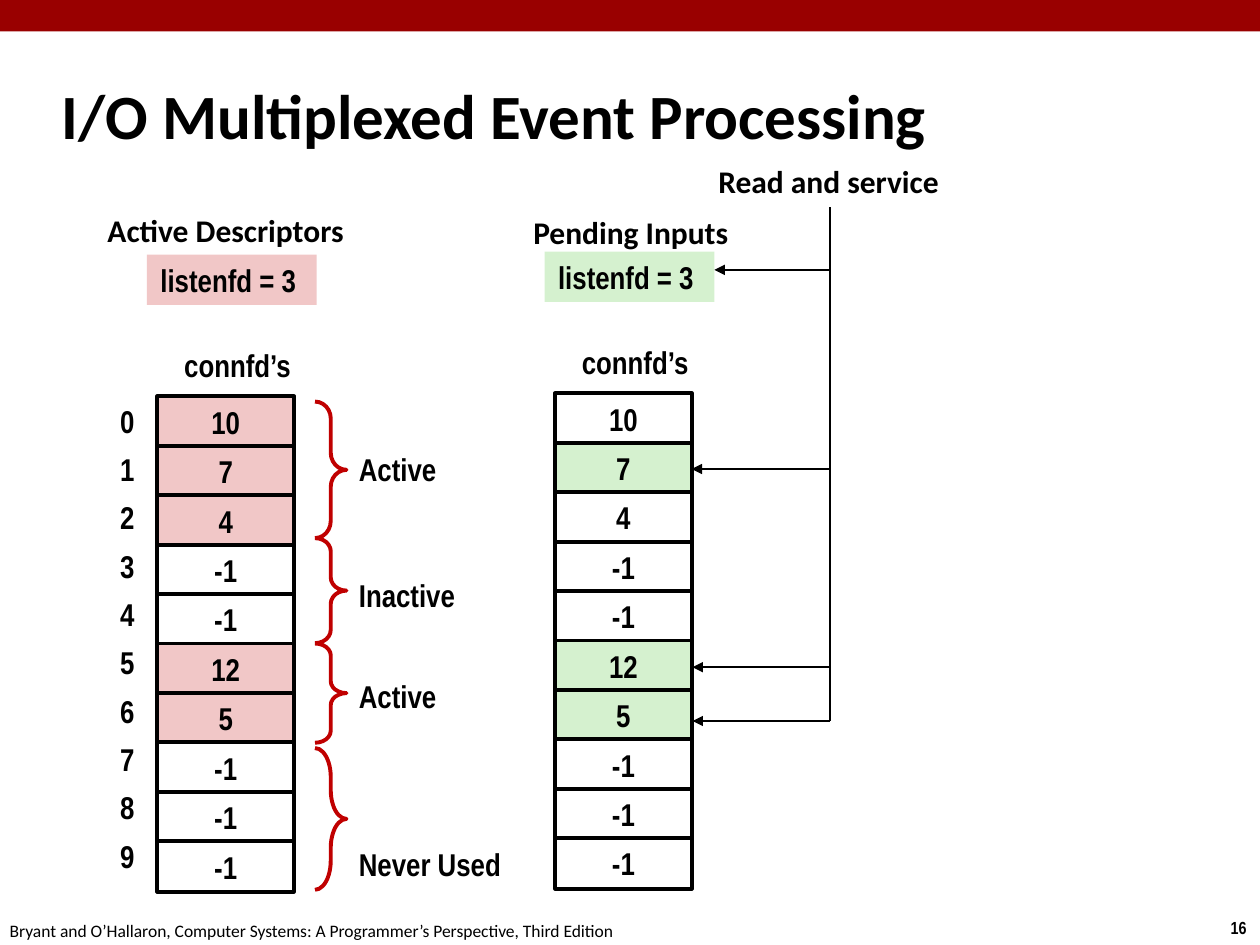
"""Build the slide on I/O multiplexed event processing."""
from dataclasses import dataclass

from lxml.etree import SubElement
from pptx import Presentation
from pptx.dml.color import RGBColor
from pptx.enum.shapes import MSO_CONNECTOR, MSO_SHAPE
from pptx.enum.text import MSO_ANCHOR, MSO_AUTO_SIZE, PP_ALIGN
from pptx.oxml.ns import qn
from pptx.util import Pt


@dataclass(frozen=True)
class Theme:
    ink: RGBColor = RGBColor(0, 0, 0)
    paper: RGBColor = RGBColor(255, 255, 255)
    banner: RGBColor = RGBColor(0x99, 0, 0)
    brace: RGBColor = RGBColor(0xC0, 0, 0)
    active: RGBColor = RGBColor(0xF1, 0xC7, 0xC7)
    pending: RGBColor = RGBColor(0xD5, 0xF1, 0xCF)
    heading: str = "Calibri"
    label: str = "Arial Narrow"
    title_size: int = 36
    text_size: int = 18
    footer_size: int = 10


theme = Theme()
prs = Presentation()
prs.slide_width, prs.slide_height = Pt(720), Pt(540)
s = prs.slides.add_slide(prs.slide_layouts[5])


def write(sp, text, font=theme.label, size=theme.text_size, bold=True,
          align=PP_ALIGN.CENTER, anchor=MSO_ANCHOR.TOP, wrap=False):
    tf = sp.text_frame
    tf.auto_size = MSO_AUTO_SIZE.NONE
    tf.word_wrap = wrap
    tf.vertical_anchor = anchor
    p = tf.paragraphs[0]
    p.alignment = align
    r = p.add_run()
    r.text = text
    r.font.name, r.font.size, r.font.bold = font, Pt(size), bold
    r.font.color.rgb = theme.ink
    return p


def add_box(kind, x, y, w, h, fill=None, line=None):
    sp = s.shapes.add_shape(kind, Pt(x), Pt(y), Pt(w), Pt(h))
    sp.shadow.inherit = False
    if fill is None:
        sp.fill.background()
    else:
        sp.fill.solid()
        sp.fill.fore_color.rgb = fill
    if line is None:
        sp.line.fill.background()
    else:
        sp.line.color.rgb = line
        sp.line.width = Pt(2.25)
    return sp


add_box(MSO_SHAPE.RECTANGLE, 0, 0, 720, 18, theme.banner)

title = s.shapes.title
title.left, title.top, title.width, title.height = Pt(28), Pt(35.5), Pt(598), Pt(60)
p = write(title, "I/O Multiplexed Event Processing", font=theme.heading,
          size=theme.title_size, align=PP_ALIGN.LEFT, anchor=MSO_ANCHOR.MIDDLE, wrap=True)
pPr = p._p.get_or_add_pPr()
pPr.set("marL", str(Pt(9)))
pPr.set("indent", str(Pt(-9)))

values = [10, 7, 4, -1, -1, 12, 5, -1, -1, -1]
row_height, row_gap, index_gap = 28.8, 28.25, 27.62
columns = [
    (90, 226.5, theme.active, {0, 1, 2, 5, 6}),
    (317.25, 224.75, theme.pending, {1, 5, 6}),
]
for left, top, colour, marked in columns:
    for i, value in enumerate(values):
        fill = colour if i in marked else theme.paper
        cell = add_box(MSO_SHAPE.RECTANGLE, left, top + i * row_gap, 78, row_height,
                       fill, theme.ink)
        write(cell, str(value), anchor=MSO_ANCHOR.MIDDLE, wrap=True)
    caption = s.shapes.add_textbox(Pt(left + 7.75), Pt(top - 32.5), Pt(76), Pt(row_height))
    write(caption, "connfd’s")
    listen = add_box(MSO_SHAPE.RECTANGLE, left - 6, top - 81, 97, row_height, colour)
    write(listen, "listenfd = 3 ")

for i in range(len(values)):
    index = s.shapes.add_textbox(Pt(6), Pt(226 + i * index_gap), Pt(78), Pt(row_height))
    write(index, str(i), align=PP_ALIGN.RIGHT, anchor=MSO_ANCHOR.MIDDLE, wrap=True)

groups = [
    ("Active", 229.5, 78, 0.54, 253.5),
    ("Inactive", 307.5, 60, 0.42, 325.5),
    ("Active", 367.75, 56.75, 0.38, 383.25),
    ("Never Used", 427.5, 81, 0.92, 479.25),
]
for text, top, height, curve, text_top in groups:
    brace = add_box(MSO_SHAPE.RIGHT_BRACE, 180, top, 18, height, line=theme.brace)
    brace.adjustments[0] = curve
    name = s.shapes.add_textbox(Pt(198), Pt(text_top), Pt(97), Pt(row_height))
    write(name, text, align=PP_ALIGN.LEFT)

headings = [
    ("Active Descriptors", 54, 117.25, 150),
    ("Pending Inputs", 282, 118, 157),
    ("Read and service", 395, 89, 157),
]
for text, left, top, width in headings:
    heading = s.shapes.add_textbox(Pt(left), Pt(top), Pt(width), Pt(row_height))
    write(heading, text, font=theme.heading)

trunk = 474.25
lines = [
    (trunk, 154.25, 408.25, 154.25, True),
    (trunk, 268, 395.25, 268, True),
    (trunk, 381.25, 395.75, 381.25, True),
    (trunk, 412, 395.75, 412, True),
    (trunk, 412, trunk, 118.25, False),
]
for x1, y1, x2, y2, arrow in lines:
    line = s.shapes.add_connector(MSO_CONNECTOR.STRAIGHT, Pt(x1), Pt(y1), Pt(x2), Pt(y2))
    line.line.color.rgb = theme.ink
    line.line.width = Pt(1.5)
    if arrow:
        SubElement(line.line._get_or_add_ln(), qn("a:tailEnd"), type="triangle")
    SubElement(line._element.spPr, qn("a:effectLst"))

number = s.shapes.add_textbox(Pt(695.5), Pt(520.5), Pt(24.5), Pt(19.5))
write(number, "16", size=theme.footer_size)
footer = s.shapes.add_textbox(Pt(-1.5), Pt(522), Pt(366), Pt(19.5))
write(footer, "Bryant and O’Hallaron, Computer Systems: A Programmer’s Perspective, Third Edition",
      font=theme.heading, size=theme.footer_size, bold=False, align=PP_ALIGN.LEFT)

prs.save("out.pptx")
